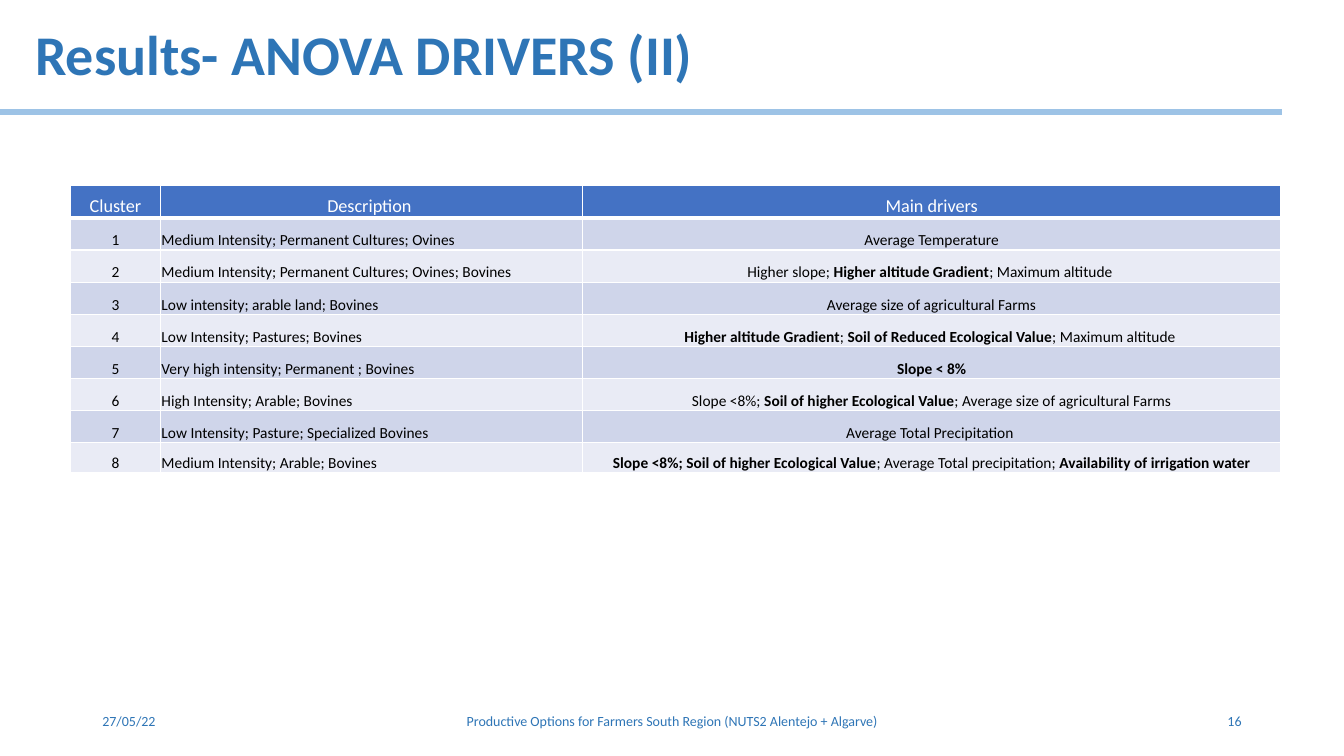
from lxml.etree import SubElement
from pptx import Presentation
from pptx.dml.color import RGBColor
from pptx.enum.shapes import MSO_CONNECTOR as Connector
from pptx.enum.text import MSO_ANCHOR as Anchor, PP_ALIGN as Align
from pptx.oxml.ns import qn
from pptx.util import Cm, Pt

COLORS = {
    "heading": "2E75B6", "rule": "9DC3E6", "header": "4472C4",
    "odd": "CFD5EA", "even": "E9EBF5", "white": "FFFFFF", "black": "000000",
}
FONT = "Calibri"
TITLE = "Results- ANOVA DRIVERS (II)"
FOOTER = [
    ("27/05/22", 2.33, 7.62, Align.LEFT),
    ("Productive Options for Farmers South Region (NUTS2 Alentejo + Algarve)", 11.22, 11.43, Align.CENTER),
    ("16", 23.92, 7.62, Align.RIGHT),
]
HEADINGS = ("Cluster", "Description ", "Main drivers")
CLUSTERS = [
    ("Medium Intensity; Permanent Cultures; Ovines", "Average Temperature"),
    ("Medium Intensity; Permanent Cultures; Ovines; Bovines",
     "Higher slope; **Higher altitude Gradient**; Maximum altitude "),
    ("Low intensity; arable land; Bovines", "Average size of agricultural Farms"),
    ("Low Intensity; Pastures; Bovines",
     "**Higher altitude Gradient**; **Soil of Reduced Ecological Value**; Maximum altitude "),
    ("Very high intensity; Permanent ; Bovines", "**Slope < 8%**"),
    ("High Intensity; Arable; Bovines",
     "Slope <8%; **Soil of higher Ecological Value**; Average size of agricultural Farms"),
    ("Low Intensity; Pasture; Specialized Bovines", "Average Total Precipitation "),
    ("Medium Intensity; Arable; Bovines",
     "**Slope <8%; Soil of higher Ecological Value**; Average Total precipitation; "
     "**Availability of irrigation water**"),
]
COLUMN_WIDTHS = (2.26, 10.64, 17.6)
ROW_HEIGHT, LAST_ROW_HEIGHT = 0.81, 0.76


def write(frame, text, size, color, align=Align.LEFT, bold=False):
    paragraph = frame.paragraphs[0]
    paragraph.alignment = align
    for index, part in enumerate(text.split("**")):
        if part:
            run = paragraph.add_run()
            run.text = part
            run.font.name = FONT
            run.font.size = Pt(size)
            run.font.bold = bold or index % 2 == 1
            run.font.color.rgb = RGBColor.from_string(COLORS[color])


def add_text(left, top, width, height, text, anchor=Anchor.TOP, **style):
    frame = slide.shapes.add_textbox(Cm(left), Cm(top), Cm(width), Cm(height)).text_frame
    frame.word_wrap = True
    frame.vertical_anchor = anchor
    write(frame, text, **style)


def add_borders(cell, bottom):
    properties = cell._tc.get_or_add_tcPr()
    for side, width in (("L", 1), ("R", 1), ("T", 1), ("B", bottom)):
        border = SubElement(properties, qn(f"a:ln{side}"), w=str(Pt(width)))
        fill = SubElement(border, qn("a:solidFill"))
        SubElement(fill, qn("a:srgbClr"), val=COLORS["white"])


deck = Presentation()
deck.slide_width, deck.slide_height = Cm(33.87), Cm(19.05)
slide = deck.slides.add_slide(deck.slide_layouts[6])

for text, left, width, align in FOOTER:
    add_text(left, 17.65, width, 1.02, text, anchor=Anchor.MIDDLE, size=10, color="heading", align=align)

rule = slide.shapes.add_connector(Connector.STRAIGHT, 0, Cm(2.82), Cm(32.31), Cm(2.82))
rule.line.color.rgb = RGBColor.from_string(COLORS["rule"])
rule.line.width = Pt(4)
SubElement(rule._element.spPr, qn("a:effectLst"))

add_text(0.64, 0.38, 33.4, 3.68, TITLE, size=40, color="heading", bold=True)

rows = [HEADINGS] + [(str(number), *cluster) for number, cluster in enumerate(CLUSTERS, 1)]
drivers = slide.shapes.add_table(
    len(rows), len(HEADINGS), Cm(1.78), Cm(4.68), Cm(sum(COLUMN_WIDTHS)),
    Cm(ROW_HEIGHT * len(CLUSTERS) + LAST_ROW_HEIGHT),
).table
for column, width in zip(drivers.columns, COLUMN_WIDTHS):
    column.width = Cm(width)

for row_index, row in enumerate(rows):
    is_header = row_index == 0
    drivers.rows[row_index].height = Cm(LAST_ROW_HEIGHT if row_index == len(CLUSTERS) else ROW_HEIGHT)
    band = "header" if is_header else "odd" if row_index % 2 else "even"
    for column_index, text in enumerate(row):
        cell = drivers.cell(row_index, column_index)
        cell.margin_left = cell.margin_right = cell.margin_top = Cm(0.03)
        cell.margin_bottom = 0
        cell.vertical_anchor = Anchor.BOTTOM
        add_borders(cell, bottom=3 if is_header else 1)
        cell.fill.solid()
        cell.fill.fore_color.rgb = RGBColor.from_string(COLORS[band])
        write(
            cell.text_frame, text, size=13 if is_header else 11,
            color="white" if is_header else "black",
            align=Align.LEFT if column_index == 1 and not is_header else Align.CENTER,
        )

deck.save("out.pptx")
